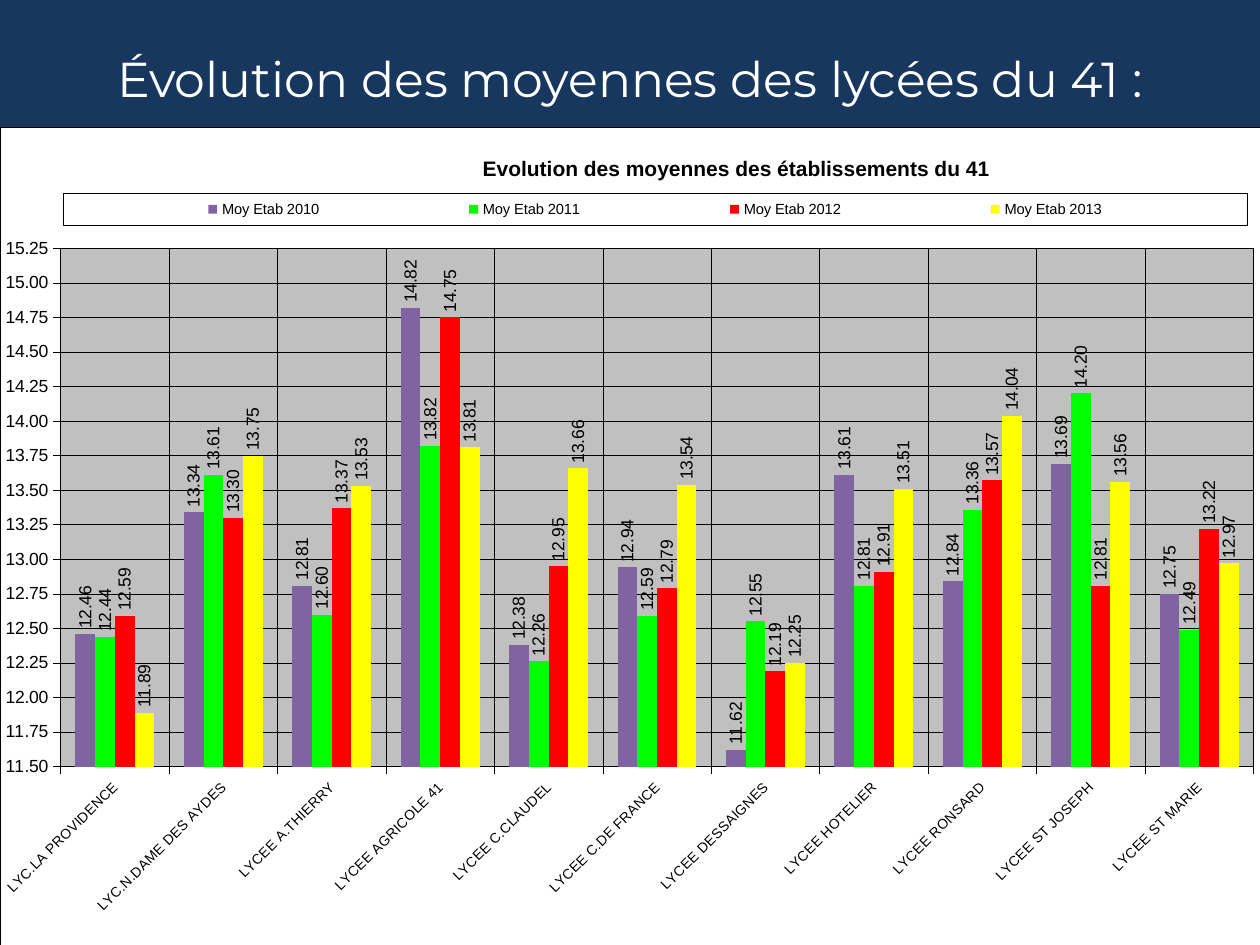
from dataclasses import dataclass
from typing import Any, NamedTuple, Optional

from pptx import Presentation
from pptx.chart.chart import Chart
from pptx.chart.data import CategoryChartData
from pptx.dml.color import RGBColor
from pptx.enum.chart import XL_CHART_TYPE, XL_LABEL_POSITION, XL_LEGEND_POSITION, XL_TICK_MARK
from pptx.enum.text import MSO_ANCHOR, PP_ALIGN
from pptx.oxml import parse_xml
from pptx.oxml.ns import nsdecls, qn
from pptx.slide import Slide
from pptx.util import Inches, Pt


@dataclass(frozen=True)
class Theme:
    navy: str = "17375E"
    white: str = "FFFFFF"
    black: str = "000000"
    grey: str = "C0C0C0"
    heading_font: str = "Montserrat"
    chart_font: str = "Arial"
    heading_size: float = 28
    chart_title_size: float = 12
    value_size: float = 10
    legend_size: float = 8.4
    category_size: float = 8
    line_width: float = 0.25


class YearSeries(NamedTuple):
    year: int
    color: str
    averages: tuple[float, ...]


class Region(NamedTuple):
    x: float
    y: float
    w: Optional[float] = None
    h: Optional[float] = None
    inner: bool = False


THEME = Theme()
SCHOOLS = (
    "LYC.LA PROVIDENCE", "LYC.N.DAME DES AYDES", "LYCEE A.THIERRY", "LYCEE AGRICOLE 41",
    "LYCEE C.CLAUDEL", "LYCEE C.DE FRANCE", "LYCEE DESSAIGNES", "LYCEE HOTELIER",
    "LYCEE RONSARD", "LYCEE ST JOSEPH", "LYCEE ST MARIE",
)
YEARS = (
    YearSeries(2010, "8064A2", (12.46, 13.34, 12.81, 14.82, 12.38, 12.94,
                                11.62, 13.61, 12.84, 13.69, 12.75)),
    YearSeries(2011, "00FF00", (12.44, 13.61, 12.6, 13.82, 12.26, 12.59,
                                12.55, 12.81, 13.36, 14.2, 12.49)),
    YearSeries(2012, "FF0000", (12.59, 13.3, 13.37, 14.75, 12.95, 12.79,
                                12.19, 12.91, 13.57, 12.81, 13.22)),
    YearSeries(2013, "FFFF00", (11.89, 13.75, 13.53, 13.81, 13.66, 13.54,
                                12.25, 13.51, 14.04, 13.56, 12.97)),
)


def apply_format(target: Any, values: dict[str, Any]) -> None:
    for name, value in values.items():
        setattr(target, name, value)


def style_font(font: Any, size: float, color: str = THEME.black,
               name: str = THEME.chart_font, bold: bool = False) -> None:
    apply_format(font, {"size": Pt(size), "name": name, "bold": bold})
    font.color.rgb = RGBColor.from_string(color)


def style_line(line: Any) -> None:
    line.color.rgb = RGBColor.from_string(THEME.black)
    line.width = Pt(THEME.line_width)


def place(element: Any, region: Region) -> None:
    for layout in element.findall(qn("c:layout")):
        element.remove(layout)
    target = '<c:layoutTarget val="inner"/>' if region.inner else ""
    modes = '<c:xMode val="edge"/><c:yMode val="edge"/>'
    sizes = "".join(f'<c:{key} val="{getattr(region, key)}"/>'
                    for key in ("x", "y", "w", "h") if getattr(region, key) is not None)
    layout = parse_xml(f'<c:layout {nsdecls("c")}><c:manualLayout>{target}{modes}{sizes}'
                       '</c:manualLayout></c:layout>')
    overlay = element.find(qn("c:overlay"))
    if overlay is None:
        element.insert(0, layout)
    else:
        overlay.addprevious(layout)


def area_format(fill: str, outlined: bool) -> Any:
    outline = (f'<a:ln w="{Pt(THEME.line_width)}"><a:solidFill><a:srgbClr val="{THEME.black}"/>'
               '</a:solidFill></a:ln>' if outlined else "<a:ln><a:noFill/></a:ln>")
    return parse_xml(f'<c:spPr {nsdecls("c", "a")}><a:solidFill><a:srgbClr val="{fill}"/>'
                     f'</a:solidFill>{outline}</c:spPr>')


def rotate_text(chart: Chart, owner: str, degrees: int) -> None:
    for body in chart.element.xpath(f".//{owner}/c:txPr/a:bodyPr"):
        body.set("rot", str(degrees * 60000))
        body.set("vert", "horz")


def style_axis(axis: Any, size: float) -> None:
    apply_format(axis, {"has_major_gridlines": True, "major_tick_mark": XL_TICK_MARK.OUTSIDE,
                        "minor_tick_mark": XL_TICK_MARK.NONE})
    style_line(axis.format.line)
    style_line(axis.major_gridlines.format.line)
    style_font(axis.tick_labels.font, size)


def style_series(series: Any, color: str) -> None:
    series.format.fill.solid()
    series.format.fill.fore_color.rgb = RGBColor.from_string(color)
    series.invert_if_negative = False
    labels = series.data_labels
    apply_format(labels, {"show_value": True, "number_format": "0.00",
                          "number_format_is_linked": False,
                          "position": XL_LABEL_POSITION.OUTSIDE_END})
    style_font(labels.font, THEME.value_size)


def add_heading(slide: Slide, text: str) -> None:
    shape = slide.shapes.add_textbox(Inches(0.13), Inches(0.21), Inches(9.74), Inches(0.81))
    apply_format(shape.text_frame, {"word_wrap": True, "vertical_anchor": MSO_ANCHOR.MIDDLE})
    paragraph = shape.text_frame.paragraphs[0]
    paragraph.alignment = PP_ALIGN.CENTER
    run = paragraph.add_run()
    run.text = text
    style_font(run.font, THEME.heading_size, THEME.white, THEME.heading_font)


def add_averages_chart(slide: Slide, title: str) -> None:
    data = CategoryChartData(number_format="0.00")
    data.categories = SCHOOLS
    for entry in YEARS:
        data.add_series(f"Moy Etab {entry.year}", entry.averages)
    chart = slide.shapes.add_chart(XL_CHART_TYPE.COLUMN_CLUSTERED, Inches(0), Inches(1.01),
                                   Inches(10), Inches(6.49), data).chart
    style_font(chart.font, THEME.value_size)

    chart.has_title = True
    chart.chart_title.text_frame.text = title
    title_run = chart.chart_title.text_frame.paragraphs[0].runs[0]
    style_font(title_run.font, THEME.chart_title_size, bold=True)

    chart.has_legend = True
    apply_format(chart.legend, {"position": XL_LEGEND_POSITION.TOP, "include_in_layout": False})
    style_font(chart.legend.font, THEME.legend_size)

    plot = chart.plots[0]
    apply_format(plot, {"gap_width": 150, "overlap": 0, "vary_by_categories": False})
    for series, entry in zip(plot.series, YEARS):
        style_series(series, entry.color)

    style_axis(chart.category_axis, THEME.category_size)
    style_axis(chart.value_axis, THEME.value_size)
    apply_format(chart.value_axis, {"minimum_scale": 11.5, "maximum_scale": 15.25,
                                    "major_unit": 0.25})
    apply_format(chart.value_axis.tick_labels, {"number_format": "0.00",
                                                "number_format_is_linked": False})
    rotate_text(chart, "c:dLbls", -90)
    rotate_text(chart, "c:catAx", -45)

    body = chart.element.find(qn("c:chart"))
    plot_area = body.find(qn("c:plotArea"))
    legend = body.find(qn("c:legend"))
    place(body.find(qn("c:title")), Region(0.38, 0.03))
    place(legend, Region(0.05, 0.08, 0.94, 0.04))
    place(plot_area, Region(0.048, 0.148, 0.947, 0.634, inner=True))
    plot_area.append(area_format(THEME.grey, outlined=False))
    legend.find(qn("c:overlay")).addnext(area_format(THEME.white, outlined=True))
    body.addnext(area_format(THEME.white, outlined=True))


def main() -> None:
    presentation = Presentation()
    apply_format(presentation, {"slide_width": Inches(10), "slide_height": Inches(7.5)})
    slide = presentation.slides.add_slide(presentation.slide_layouts[6])
    slide.background.fill.solid()
    slide.background.fill.fore_color.rgb = RGBColor.from_string(THEME.navy)
    add_heading(slide, "Évolution des moyennes des lycées du 41 :")
    add_averages_chart(slide, "Evolution des moyennes des établissements du 41")
    presentation.save("out.pptx")


if __name__ == "__main__":
    main()
